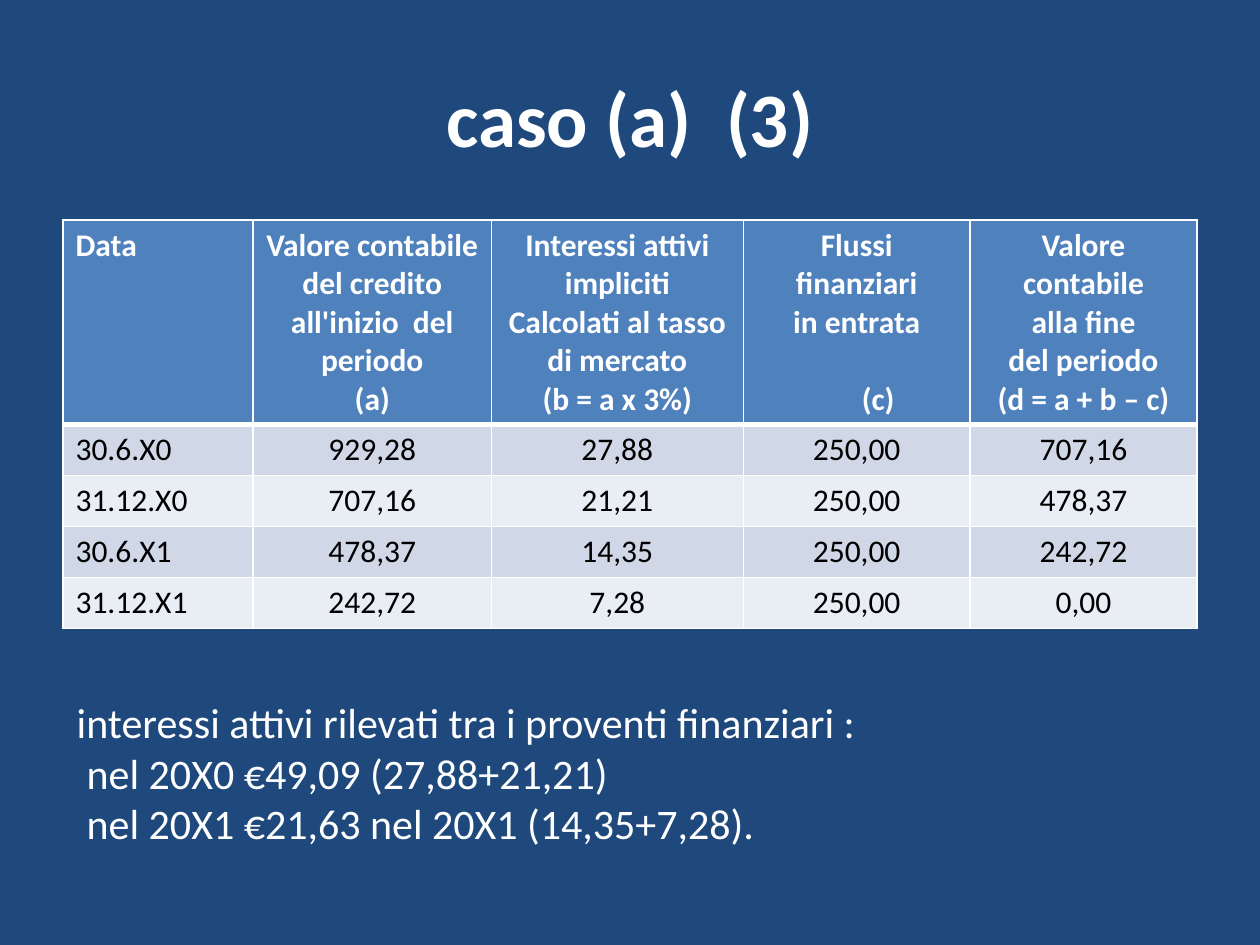
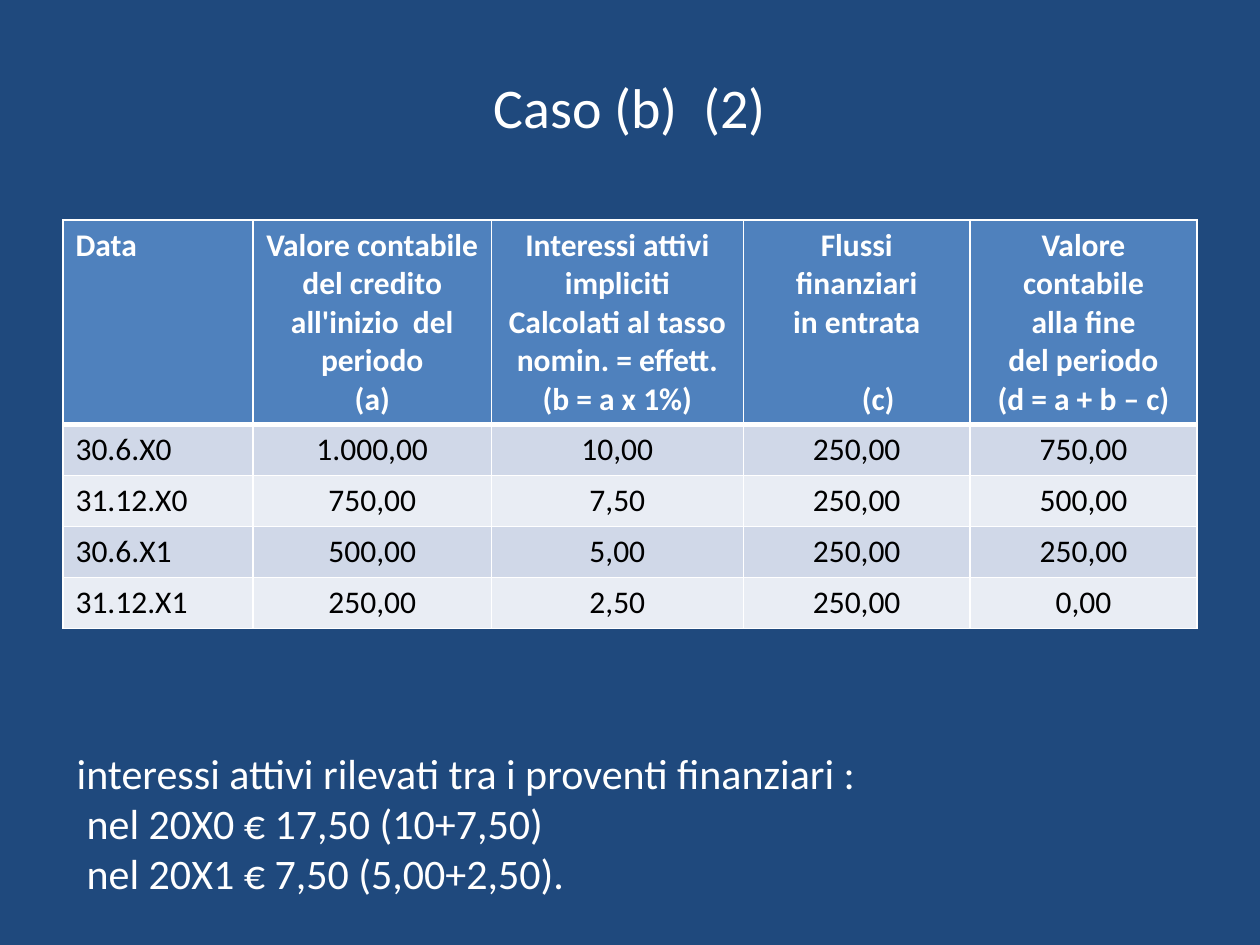
from lxml.etree import SubElement
from pptx import Presentation
from pptx.dml.color import RGBColor
from pptx.enum.text import MSO_ANCHOR, PP_ALIGN
from pptx.oxml import parse_xml
from pptx.oxml.ns import nsdecls, qn
from pptx.util import Inches, Pt

W, H = Inches(10), Inches(7.5)
FONT = "Calibri"
NAVY, BLUE, WHITE, BLACK = "1F497D", "4F81BD", "FFFFFF", "000000"
BANDS = ["D0D8E8", "E9EDF4"]
COL_SHARES = [0.151, 0.189, 0.2, 0.18, 0.18]
HEAD_ROW, BODY_ROW = 0.216, 0.054
DATES = ["30.6.X0", "31.12.X0", "30.6.X1", "31.12.X1"]
CASH_FLOW = "250,00"
NOTE_LEAD = "interessi attivi rilevati tra i proventi finanziari :"


def rgb(value):
    """Turn a hex string into a colour."""
    return RGBColor.from_string(value)


def box(left, top, width, height):
    """Turn shares of the slide into a position and a size."""
    return [round(n) for n in (left * W, top * H, width * W, height * H)]


def style(p, size, color, bold=False, align=PP_ALIGN.LEFT):
    """Set the alignment and font of a paragraph."""
    p.alignment = align
    for r in p.runs:
        r.font.name, r.font.size, r.font.bold = FONT, Pt(size), bold
        r.font.color.rgb = rgb(color)


def indent(p, inches):
    """Move the left margin of a paragraph."""
    p._p.get_or_add_pPr().set("marL", str(Inches(inches)))


def add_text(s, text, area, size, **look):
    """Add a wrapping white text box and return its frame."""
    tf = s.shapes.add_textbox(*box(*area)).text_frame
    tf.word_wrap = True
    tf.text = text
    for p in tf.paragraphs:
        style(p, size, WHITE, **look)
    return tf


def add_title(s, text, height, size, bold):
    """Add the centred slide title."""
    tf = add_text(s, text, (0.05, 0.04, 0.9, height), size, bold=bold,
                  align=PP_ALIGN.CENTER)
    tf.vertical_anchor = MSO_ANCHOR.MIDDLE


def add_note(s, top, years):
    """Add the lead line and its slightly indented yearly amounts."""
    tf = add_text(s, "\n".join([NOTE_LEAD, *years]),
                  (0.051, top, 0.898, 0.175), 24)
    for p in tf.paragraphs[1:]:
        indent(p, 0.08)


def set_borders(cell, top, bottom):
    """Draw white borders round a cell, widths in points."""
    tcPr = cell._tc.get_or_add_tcPr()
    widths = {"lnL": 1, "lnR": 1, "lnT": top, "lnB": bottom}
    for i, (side, width) in enumerate(widths.items()):
        ln = parse_xml(f'<a:{side} {nsdecls("a")} w="{Pt(width)}"/>')
        fill = SubElement(ln, qn("a:solidFill"))
        SubElement(fill, qn("a:srgbClr"), val=WHITE)
        tcPr.insert(i, ln)


def fill_cell(cell, text, row, col):
    """Write and colour one cell by its place in the table."""
    head = row == 0
    cell.fill.solid()
    cell.fill.fore_color.rgb = rgb(BLUE if head else BANDS[(row - 1) % 2])
    cell.text_frame.text = text
    for p in cell.text_frame.paragraphs:
        style(p, 18, WHITE if head else BLACK, head,
              PP_ALIGN.CENTER if col else PP_ALIGN.LEFT)
    set_borders(cell, 3 if row == 1 else 1, 3 if head else 1)


def add_schedule(s, basis, rate, values, interests):
    """Add the amortisation table; each period opens at the last closing."""
    headers = [
        "Data",
        "Valore contabile\ndel credito\nall'inizio  del periodo\n(a)",
        f"Interessi attivi\nimpliciti\nCalcolati al tasso {basis}\n(b = a x {rate})",
        "Flussi\nfinanziari\nin entrata\n(c)",
        "Valore\ncontabile\nalla fine\ndel periodo\n(d = a + b – c)",
    ]
    flows = [CASH_FLOW] * len(DATES)
    rows = [headers, *zip(DATES, values, interests, flows, values[1:])]
    height = HEAD_ROW + BODY_ROW * len(DATES)
    table = s.shapes.add_table(len(rows), len(headers),
                               *box(0.05, 0.233, 0.9, height)).table
    for column, share in zip(table.columns, COL_SHARES):
        column.width = round(share * W)
    for i, row in enumerate(rows):
        table.rows[i].height = round((BODY_ROW if i else HEAD_ROW) * H)
        for j, text in enumerate(row):
            fill_cell(table.cell(i, j), text, i, j)
    flow_mark = table.cell(0, 3).text_frame.paragraphs[-1]
    flow_mark.space_before = Pt(22)
    indent(flow_mark, 0.34)


def add_slide(prs):
    """Add a blank slide with the navy background."""
    s = prs.slides.add_slide(prs.slide_layouts[6])
    s.background.fill.solid()
    s.background.fill.fore_color.rgb = rgb(NAVY)
    return s


def main():
    """Build both slides and save them."""
    prs = Presentation()
    prs.slide_width, prs.slide_height = W, H

    s = add_slide(prs)
    add_title(s, "caso (a)  (3)", 0.167, 44, True)
    add_schedule(s, "di mercato", "3%",
                 ["929,28", "707,16", "478,37", "242,72", "0,00"],
                 ["27,88", "21,21", "14,35", "7,28"])
    add_note(s, 0.731, ["nel 20X0 €49,09 (27,88+21,21)",
                        "nel 20X1 €21,63 nel 20X1 (14,35+7,28)."])

    s = add_slide(prs)
    add_title(s, "Caso (b)  (2)", 0.145, 32, False)
    add_schedule(s, "nomin. = effett.", "1%",
                 ["1.000,00", "750,00", "500,00", "250,00", "0,00"],
                 ["10,00", "7,50", "5,00", "2,50"])
    add_note(s, 0.784, ["nel 20X0 € 17,50 (10+7,50)",
                        "nel 20X1 € 7,50 (5,00+2,50)."])

    prs.save("out.pptx")


if __name__ == "__main__":
    main()
